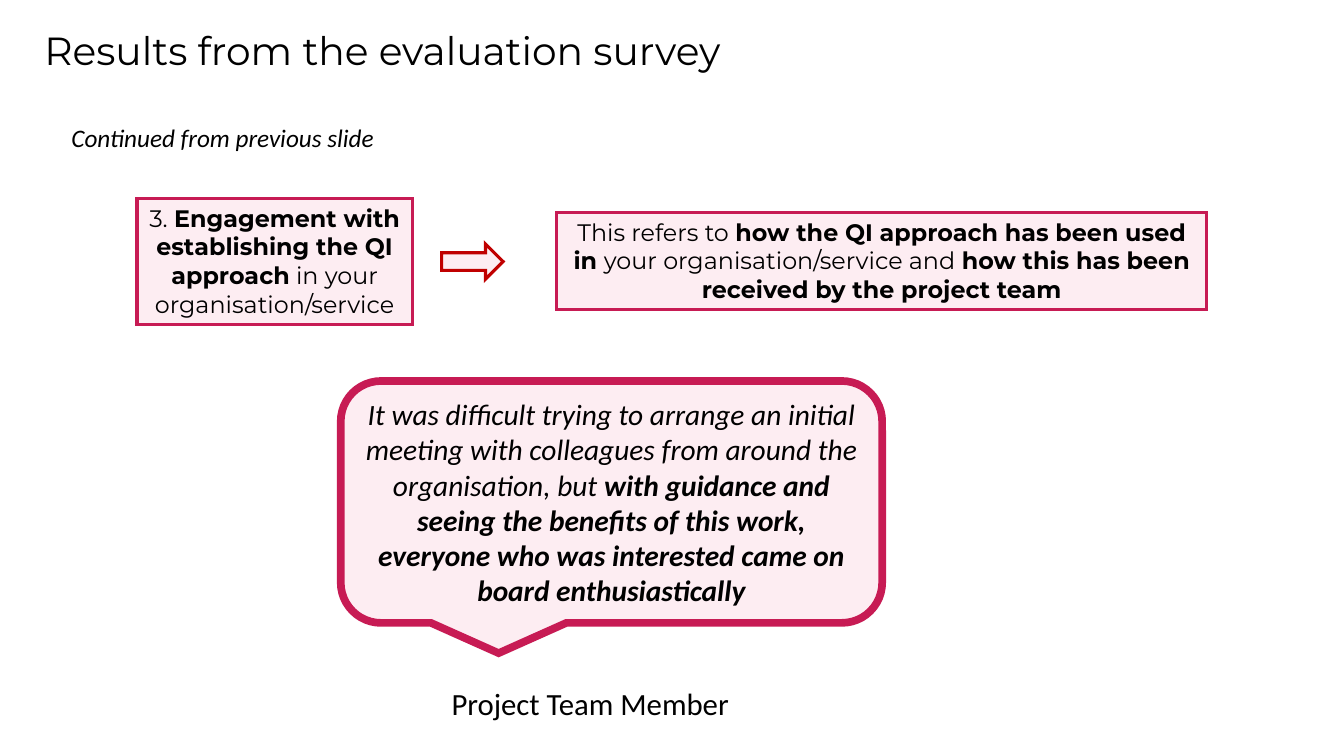
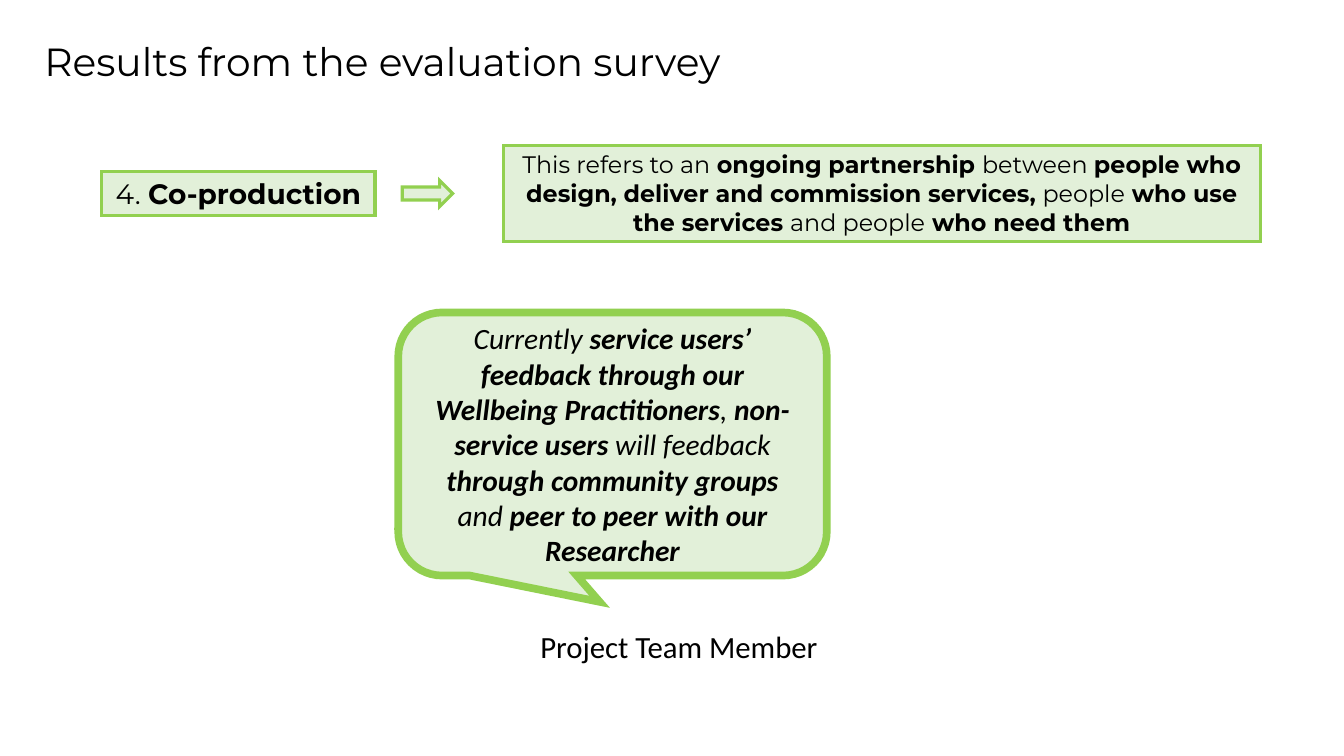
from dataclasses import dataclass
from typing import Optional

from lxml import etree
from pptx import Presentation
from pptx.dml.color import RGBColor
from pptx.enum import shapes, text
from pptx.oxml import ns
from pptx.util import Inches, Pt

BLACK = RGBColor(0x00, 0x00, 0x00)
PINK = RGBColor(0xFD, 0xED, 0xF2)
CRIMSON = RGBColor(0xC7, 0x1B, 0x54)
RED = RGBColor(0xC0, 0x00, 0x00)
PALE_GREEN = RGBColor(0xE2, 0xF0, 0xD9)
GREEN = RGBColor(0x92, 0xD0, 0x50)

HEADING_FONT = "Montserrat"
BODY_FONT = "Calibri"
TITLE = "Results from the evaluation survey"
SPEAKER = "Project Team Member"
BOLD_MARK = "**"
Shape = shapes.MSO_SHAPE


@dataclass(frozen=True)
class Box:
    left: float
    top: float
    width: float
    height: float

    def lengths(self) -> tuple:
        return tuple(Inches(v) for v in (self.left, self.top, self.width, self.height))


@dataclass(frozen=True)
class Style:
    font: str
    size: float
    italic: bool = False
    align: text.PP_ALIGN = text.PP_ALIGN.LEFT


@dataclass(frozen=True)
class Palette:
    fill: RGBColor
    line: RGBColor
    arrow_line: RGBColor


@dataclass(frozen=True)
class Label:
    box: Box
    words: str
    size: float = 17


@dataclass(frozen=True)
class Finding:
    palette: Palette
    title_top: float
    theme: Label
    arrow: Box
    meaning: Label
    quote: Label
    speaker: Box
    tail: Optional[tuple] = None
    note: Optional[Label] = None


FINDINGS = [
    Finding(
        palette=Palette(PINK, CRIMSON, RED),
        title_top=-0.11,
        theme=Label(
            Box(1.36, 1.97, 2.73, 1.25),
            "3. **Engagement with establishing the QI approach** in your organisation/service",
        ),
        arrow=Box(4.38, 2.42, 0.61, 0.35),
        meaning=Label(
            Box(5.52, 2.11, 6.45, 0.96),
            "This refers to **how the QI approach has been used in **your "
            "organisation/service and **how this has been received by the project team**",
        ),
        quote=Label(
            Box(3.38, 3.78, 5.37, 2.4),
            "It was difficult trying to arrange an initial meeting with colleagues "
            "from around the organisation, but **with guidance and seeing the benefits "
            "of this work, everyone who was interested came on board enthusiastically**",
            21,
        ),
        speaker=Box(4.38, 6.74, 3.18, 0.47),
        note=Label(Box(0.61, 1.16, 3.77, 0.4), "Continued from previous slide", 18),
    ),
    Finding(
        palette=Palette(PALE_GREEN, GREEN, GREEN),
        title_top=0,
        theme=Label(Box(1.01, 1.7, 2.71, 0.44), "4. **Co-production**", 20),
        arrow=Box(3.99, 1.79, 0.5, 0.26),
        meaning=Label(
            Box(4.99, 1.44, 7.51, 0.96),
            "This refers to an **ongoing partnership **between **people who design, "
            "deliver and commission services,** people** who use the services **and "
            "people** who need them**",
        ),
        quote=Label(
            Box(3.95, 3.1, 4.25, 2.61),
            "Currently **service users’ feedback through our Wellbeing Practitioners**, "
            "**non-service users** will feedback **through community groups** and "
            "**peer to peer with our Researcher**",
            21,
        ),
        speaker=Box(5.26, 6.18, 3.18, 0.47),
        tail=(-0.03, 0.6),
    ),
]


def write(tf, words: str, style: Style):
    tf.word_wrap = True
    p = tf.paragraphs[0]
    p.alignment = style.align
    for i, part in enumerate(words.split(BOLD_MARK)):
        if not part:
            continue
        r = p.add_run()
        r.text = part
        r.font.name = style.font
        r.font.size = Pt(style.size)
        r.font.bold = i % 2 == 1
        r.font.italic = style.italic
        r.font.color.rgb = BLACK
    return p


def add_title(slide, top: float) -> None:
    sp = slide.shapes.title
    sp.left, sp.top, sp.width, sp.height = Box(0.34, top, 12.19, 1.27).lengths()
    tf = sp.text_frame
    tf.auto_size = text.MSO_AUTO_SIZE.NONE
    tf.vertical_anchor = text.MSO_ANCHOR.MIDDLE
    write(tf, TITLE, Style(HEADING_FONT, 28)).line_spacing = 0.9


def add_outlined(slide, kind: Shape, box: Box, fill: RGBColor, line: RGBColor,
                 weight: float = 2.25):
    sp = slide.shapes.add_shape(kind, *box.lengths())
    sp.shadow.inherit = False
    sp.fill.solid()
    sp.fill.fore_color.rgb = fill
    sp.line.color.rgb = line
    sp.line.width = Pt(weight)
    outline = sp.element.spPr.find(ns.qn("a:ln"))
    etree.SubElement(outline, ns.qn("a:miter")).set("lim", "800000")
    return sp


def add_panel(slide, label: Label, palette: Palette) -> None:
    sp = add_outlined(slide, Shape.RECTANGLE, label.box, palette.fill, palette.line)
    tf = sp.text_frame
    tf.vertical_anchor = text.MSO_ANCHOR.TOP
    tf.auto_size = text.MSO_AUTO_SIZE.SHAPE_TO_FIT_TEXT
    write(tf, label.words, Style(HEADING_FONT, label.size, align=text.PP_ALIGN.CENTER))


def add_quote(slide, label: Label, palette: Palette, tail: Optional[tuple]) -> None:
    sp = add_outlined(slide, Shape.ROUNDED_RECTANGULAR_CALLOUT, label.box,
                      palette.fill, palette.line, 5.5)
    if tail:
        sp.adjustments[0], sp.adjustments[1] = tail
    tf = sp.text_frame
    tf.vertical_anchor = text.MSO_ANCHOR.MIDDLE
    style = Style(BODY_FONT, label.size, italic=True, align=text.PP_ALIGN.CENTER)
    write(tf, label.words, style).space_after = Pt(3)


def add_text(slide, label: Label, italic: bool = False) -> None:
    tf = slide.shapes.add_textbox(*label.box.lengths()).text_frame
    tf.auto_size = text.MSO_AUTO_SIZE.SHAPE_TO_FIT_TEXT
    write(tf, label.words, Style(BODY_FONT, label.size, italic))


def add_finding(prs, finding: Finding) -> None:
    slide = prs.slides.add_slide(prs.slide_layouts[5])
    palette = finding.palette
    add_title(slide, finding.title_top)
    if finding.note:
        add_text(slide, finding.note, italic=True)
    add_panel(slide, finding.theme, palette)
    add_outlined(slide, Shape.RIGHT_ARROW, finding.arrow, palette.fill, palette.arrow_line)
    add_panel(slide, finding.meaning, palette)
    add_quote(slide, finding.quote, palette, finding.tail)
    add_text(slide, Label(finding.speaker, SPEAKER, 22))


def main() -> None:
    prs = Presentation()
    prs.slide_width, prs.slide_height = Inches(13.33), Inches(7.5)
    for finding in FINDINGS:
        add_finding(prs, finding)
    prs.save("out.pptx")


if __name__ == "__main__":
    main()
